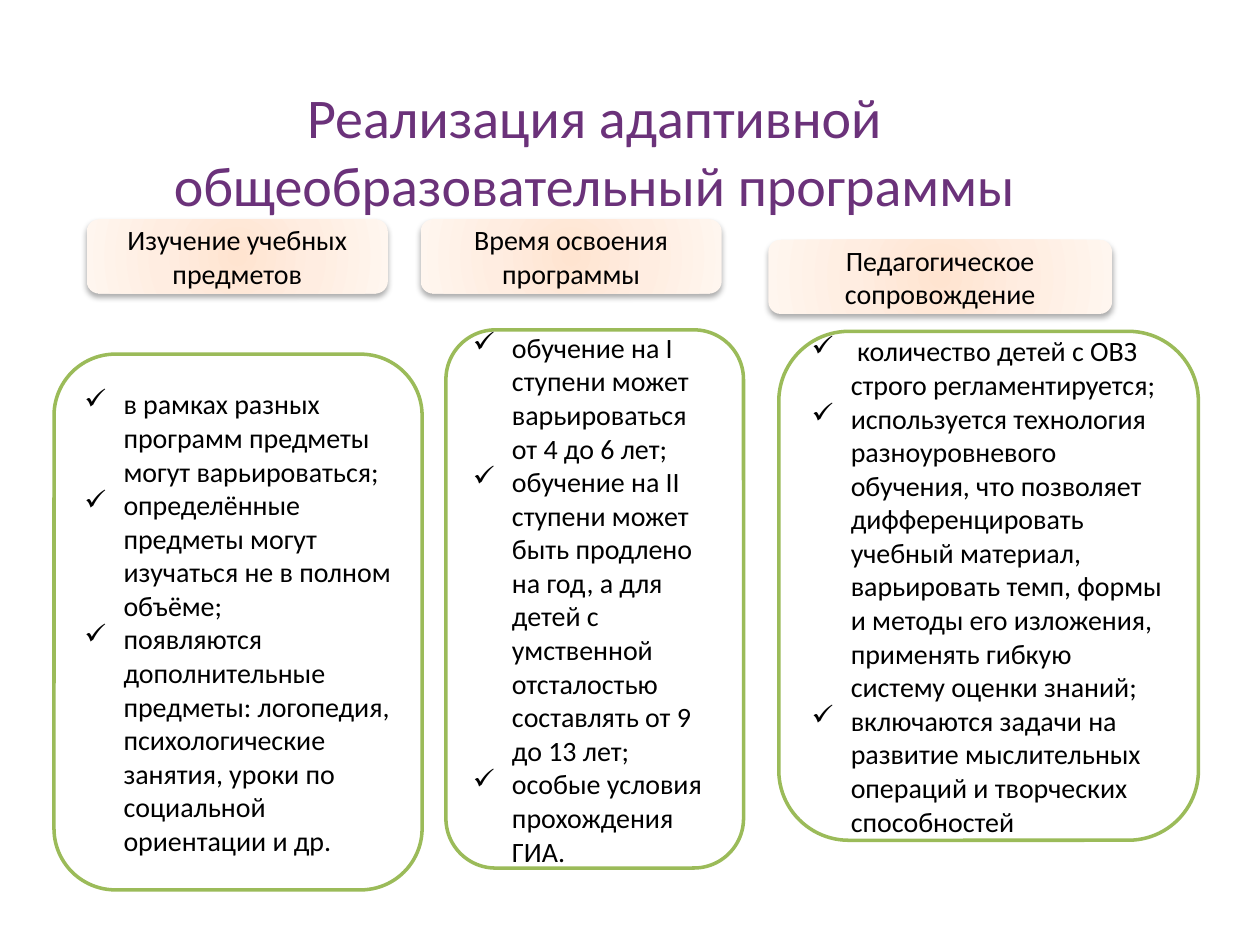
from lxml import etree
from pptx import Presentation
from pptx import util as u
from pptx.dml import color
from pptx.enum import shapes, text
from pptx.oxml import ns, parse_xml

FONT = "Calibri"
BLACK, PURPLE, GREEN = "000000", "6B327A", "9BBB59"
PEACH_STOPS = ((0, "FFE4D0"), (50, "FFEDE1"), (100, "FFF6EF"))

TITLE = ["Реализация адаптивной", "общеобразовательный программы"]
COLUMNS = [
    {
        "heading": "Изучение учебных предметов",
        "heading_place": (1.75, 4.42, 6.07, 1.5),
        "list_place": (1.09, 7.14, 7.42, 10.8),
        "items": [
            "в рамках разных программ предметы могут варьироваться;",
            "определённые предметы могут изучаться не в полном объёме;",
            "появляются дополнительные предметы: логопедия, психологические "
            "занятия, уроки по социальной ориентации и др.",
        ],
    },
    {
        "heading": "Время освоения программы",
        "heading_place": (8.48, 4.42, 6.07, 1.5),
        "list_place": (8.99, 6.65, 6, 10.85),
        "items": [
            "обучение на I ступени может варьироваться \nот 4 до 6 лет;",
            "обучение на II ступени может быть продлено на год, а для детей "
            "с умственной отсталостью составлять от 9 до 13 лет;",
            "особые условия прохождения ГИА.",
        ],
    },
    {
        "heading": "Педагогическое сопровождение",
        "heading_place": (15.49, 4.83, 6.93, 1.5),
        "list_place": (15.7, 6.68, 8.46, 10.26),
        "items": [
            " количество детей с ОВЗ строго регламентируется;",
            "используется технология разноуровневого обучения, что позволяет "
            "дифференцировать учебный материал, варьировать темп, формы и методы "
            "его изложения, применять гибкую систему оценки знаний;",
            "включаются задачи на развитие мыслительных операций и творческих "
            "способностей",
        ],
    },
]


def rgb(value):
    """Turn a hex string into a colour."""
    return color.RGBColor.from_string(value)


def place(values):
    """Turn left, top, width and height in centimetres into lengths."""
    return [u.Cm(value) for value in values]


def add_bullet(para):
    """Give a paragraph a hanging check mark."""
    properties = para._p.get_or_add_pPr()
    properties.set("marL", str(u.Cm(0.79)))
    properties.set("indent", str(-u.Cm(0.79)))
    etree.SubElement(properties, ns.qn("a:buChar")).set("char", "✓")


def write(shape, lines, size=16, tint=BLACK, align=text.PP_ALIGN.CENTER, bullets=False):
    """Fill a shape with one formatted paragraph per line."""
    frame = shape.text_frame
    frame.word_wrap = True
    frame.vertical_anchor = text.MSO_ANCHOR.MIDDLE
    for index, line in enumerate(lines):
        para = frame.paragraphs[0] if index == 0 else frame.add_paragraph()
        para.text = line
        para.alignment = align
        if bullets:
            add_bullet(para)
        for line_break in para._p.findall(ns.qn("a:br")):
            etree.SubElement(line_break, ns.qn("a:rPr")).set("sz", str(size * 100))
        for span in para.runs:
            span.font.name = FONT
            span.font.size = u.Pt(size)
            span.font.color.rgb = rgb(tint)


def add_title(page, lines):
    """Add the centred slide title."""
    box = page.shapes.add_textbox(*place((0.46, 0.89, 23.06, 4.27)))
    write(box, lines, size=32, tint=PURPLE)


def add_heading(page, heading, position):
    """Add a column heading with a radial gradient and a soft shadow."""
    box = page.shapes.add_shape(shapes.MSO_SHAPE.ROUNDED_RECTANGLE, *place(position))
    box.line.fill.background()
    stops = "".join(
        f'<a:gs pos="{stop * 1000}"><a:srgbClr val="{tint}"/></a:gs>'
        for stop, tint in PEACH_STOPS
    )
    outline = box._element.spPr.find(ns.qn("a:ln"))
    outline.addprevious(parse_xml(
        f'<a:gradFill {ns.nsdecls("a")}><a:gsLst>{stops}</a:gsLst><a:path path="circle">'
        '<a:fillToRect l="50000" t="50000" r="50000" b="50000"/></a:path></a:gradFill>'
    ))
    outline.addnext(parse_xml(
        f'<a:effectLst {ns.nsdecls("a")}><a:outerShdw blurRad="{u.Pt(3.5)}" '
        f'dist="{u.Pt(2.2)}" dir="5400000" rotWithShape="0"><a:srgbClr val="{BLACK}">'
        '<a:alpha val="32000"/></a:srgbClr></a:outerShdw></a:effectLst>'
    ))
    write(box, [heading])


def add_list(page, items, position):
    """Add an outlined rounded box with a check-marked list."""
    box = page.shapes.add_shape(shapes.MSO_SHAPE.ROUNDED_RECTANGLE, *place(position))
    box.shadow.inherit = False
    box.fill.background()
    box.line.color.rgb = rgb(GREEN)
    box.line.width = u.Pt(2)
    write(box, items, align=text.PP_ALIGN.LEFT, bullets=True)


def main():
    """Build the slide and save the deck."""
    deck = Presentation()
    deck.slide_width, deck.slide_height = u.Cm(25.4), u.Cm(19.05)
    page = deck.slides.add_slide(deck.slide_layouts[6])
    add_title(page, TITLE)
    for column in COLUMNS:
        add_heading(page, column["heading"], column["heading_place"])
        add_list(page, column["items"], column["list_place"])
    deck.save("out.pptx")


if __name__ == "__main__":
    main()
